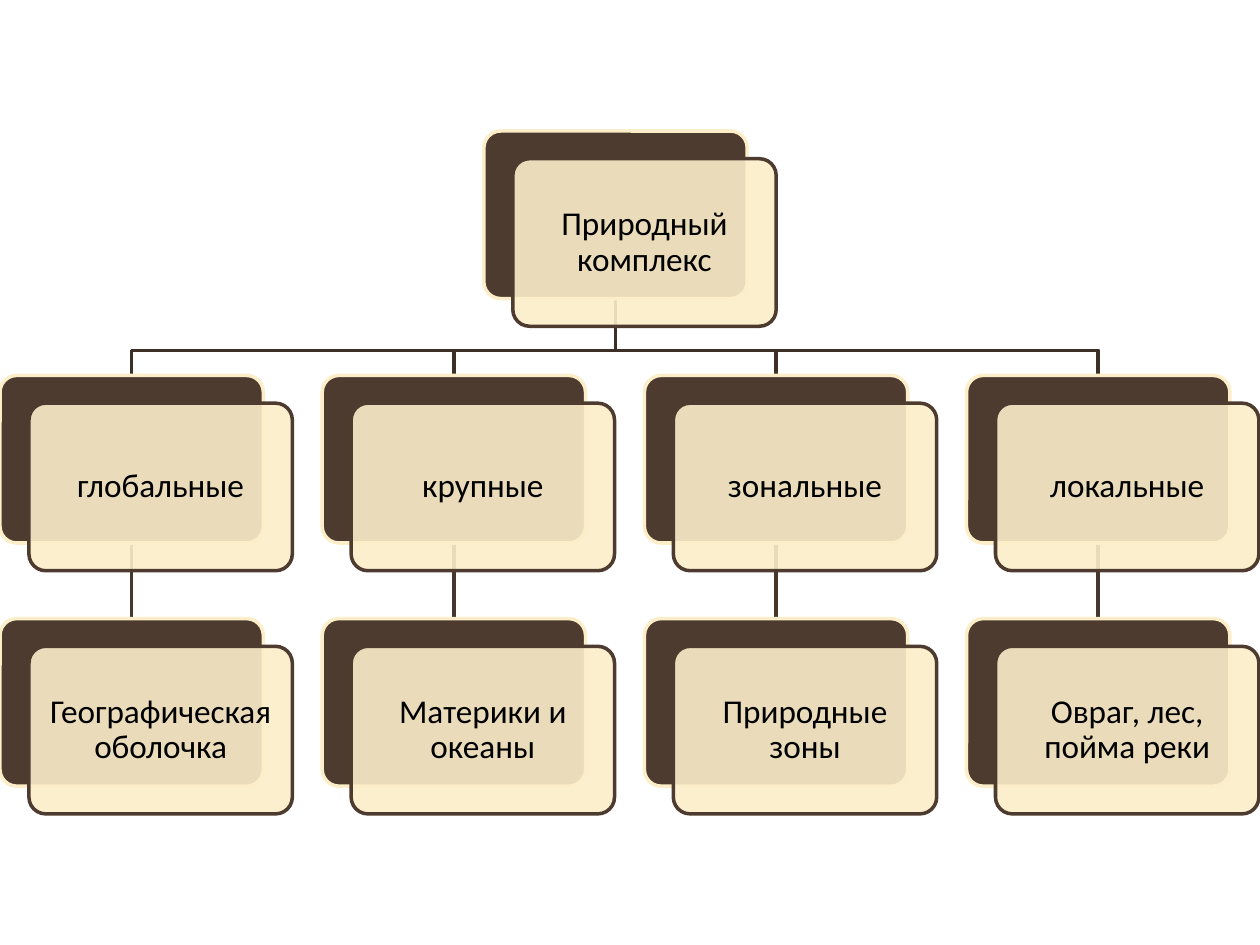
from pptx import Presentation
from pptx.util import Inches, Pt
from pptx.dml.color import RGBColor
from pptx.enum import shapes as kinds, text as txt
from pptx.oxml.ns import qn
from lxml import etree

BROWN, CREAM = "4E3B30", "FBEEC9"
WIDE, HIGH = 2.09, 1.33      # card size
DX, DY = 0.23, 0.22          # offset of the front card
STEP = 2.557                 # distance between columns
TOP, MID, LOW = 1.04, 2.98, 4.91
ROOT = 3.84
COLS = [
    ("глобальные", "Географическая оболочка"),
    ("крупные", "Материки и океаны"),
    ("зональные", "Природные зоны"),
    ("локальные", "Овраг, лес, пойма реки"),
]


def color(code):
    return RGBColor.from_string(code)


def stroke(line, code):
    line.color.rgb = color(code)
    line.width = Pt(2)


def plate(slide, x, y, fill, edge):
    box = slide.shapes.add_shape(
        kinds.MSO_SHAPE.ROUNDED_RECTANGLE,
        Inches(x), Inches(y), Inches(WIDE), Inches(HIGH))
    box.adjustments[0] = 0.1
    box.shadow.inherit = False
    box.fill.solid()
    box.fill.fore_color.rgb = color(fill)
    stroke(box.line, edge)
    return box


def label(slide, x, y, words):
    gap = 0.04
    box = slide.shapes.add_textbox(
        Inches(x + gap), Inches(y + gap),
        Inches(WIDE - 2 * gap), Inches(HIGH - 2 * gap))
    frame = box.text_frame
    frame.word_wrap = True
    frame.vertical_anchor = txt.MSO_ANCHOR.MIDDLE
    frame.margin_left = frame.margin_right = Inches(0.08)
    frame.margin_top = frame.margin_bottom = Inches(0.08)
    frame.text = words
    para = frame.paragraphs[0]
    para.alignment = txt.PP_ALIGN.CENTER
    para.line_spacing = 0.9
    font = para.runs[0].font
    font.name, font.size = "Calibri", Pt(19)
    font.color.rgb = color("000000")


def card(slide, x, y, words):
    # Dark back plate, translucent front plate, text
    plate(slide, x, y, BROWN, CREAM)
    front = plate(slide, x + DX, y + DY, CREAM, BROWN)
    tint = front.fill._xPr.find(qn("a:solidFill"))[0]
    etree.SubElement(tint, qn("a:alpha")).set("val", "90000")
    label(slide, x + DX, y + DY, words)


def branch(slide, x1, y1, x2, y2):
    # Elbow from the root down to a column
    bend = y2 - 0.2
    pen = slide.shapes.build_freeform(Inches(x1), Inches(y1))
    pen.add_line_segments(
        [(Inches(x), Inches(y)) for x, y in ((x1, bend), (x2, bend), (x2, y2))],
        close=False)
    path = pen.convert_to_shape()
    path.shadow.inherit = False
    path.fill.background()
    stroke(path.line, "3E2F26")


def stem(slide, x, y1, y2):
    # Straight line between two cards of a column
    line = slide.shapes.add_connector(
        kinds.MSO_CONNECTOR.STRAIGHT,
        Inches(x), Inches(y1), Inches(x), Inches(y2))
    stroke(line.line, "47362C")
    etree.SubElement(line._element.spPr, qn("a:effectLst"))


def tree(slide):
    half = WIDE / 2
    spots = [i * STEP for i in range(len(COLS))]
    # Lines lie behind the cards
    for x in reversed(spots):
        stem(slide, x + half, MID + HIGH, LOW)
        branch(slide, ROOT + half, TOP + HIGH, x + half, MID)
    card(slide, ROOT, TOP, "Природный комплекс")
    for x, (kind, case) in zip(spots, COLS):
        card(slide, x, MID, kind)
        card(slide, x, LOW, case)


def main():
    deck = Presentation()
    deck.slide_width, deck.slide_height = Inches(10), Inches(7.5)
    tree(deck.slides.add_slide(deck.slide_layouts[6]))
    deck.save("out.pptx")


if __name__ == "__main__":
    main()
